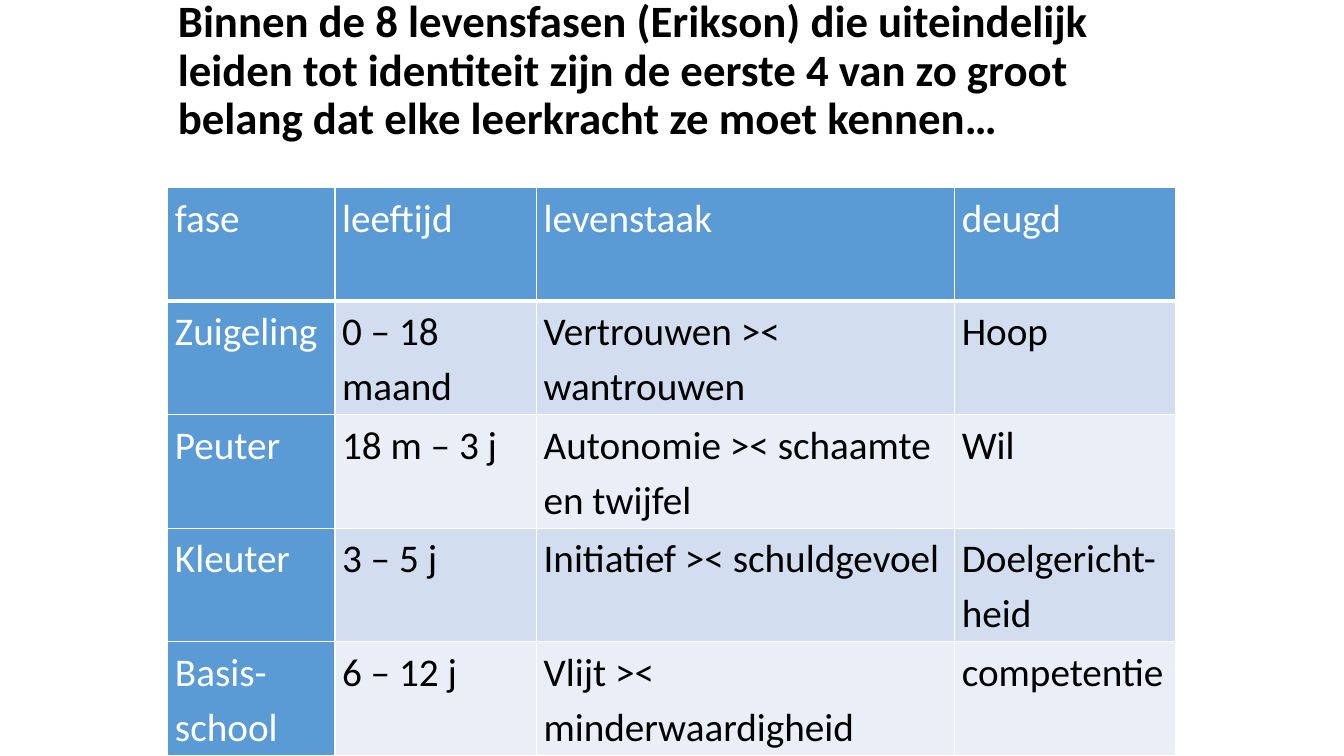
"""Build a slide with a table of Erikson's first four life stages."""
import lxml.etree
import pptx
import pptx.dml.color
import pptx.enum.text
import pptx.oxml.ns
import pptx.util

Cm = pptx.util.Cm
Pt = pptx.util.Pt
FONT = "Calibri"
COLORS = {
    "black": "000000",
    "white": "FFFFFF",
    "head": "5B9BD5",
    "dark": "D2DEEF",
    "light": "EAEFF7",
}
TITLE = (
    "Binnen de 8 levensfasen (Erikson) die uiteindelijk leiden tot identiteit "
    "zijn de eerste 4 van zo groot belang dat elke leerkracht ze moet kennen…"
)
STAGES = [
    ["fase", "leeftijd", "levenstaak", "deugd"],
    ["Zuigeling", "0 – 18 maand", "Vertrouwen >< wantrouwen", "Hoop"],
    ["Peuter", "18 m – 3 j", "Autonomie >< schaamte en twijfel", "Wil"],
    ["Kleuter", "3 – 5 j", "Initiatief >< schuldgevoel", "Doelgericht-heid"],
    ["Basis-school", "6 – 12 j", "Vlijt >< minderwaardigheid", "competentie"],
]
WIDTHS = [4.21, 5.08, 10.54, 5.57]
HEIGHT = 2.86


def rgb(name):
    return pptx.dml.color.RGBColor.from_string(COLORS[name])


def write(frame, text, size, color, spacing, bold=False):
    para = frame.paragraphs[0]
    para.alignment = pptx.enum.text.PP_ALIGN.LEFT
    para.line_spacing = spacing
    run = para.add_run()
    run.text = text
    run.font.name = FONT
    run.font.size = Pt(size)
    run.font.bold = bold
    run.font.color.rgb = rgb(color)


def add_title(slide):
    title = slide.shapes.title
    title.left, title.top = Cm(4.23), Cm(0.91)
    title.width, title.height = Cm(25.4), Cm(3.02)
    frame = title.text_frame
    frame.word_wrap = True
    frame.auto_size = pptx.enum.text.MSO_AUTO_SIZE.NONE
    frame.vertical_anchor = pptx.enum.text.MSO_ANCHOR.MIDDLE
    frame.margin_bottom = Cm(1.35)
    write(frame, TITLE, 32, "black", 0.9, bold=True)


def add_edges(cell, widths):
    props = cell._tc.get_or_add_tcPr()
    qn = pptx.oxml.ns.qn
    for side, width in widths.items():
        line = lxml.etree.SubElement(props, qn(f"a:ln{side}"), w=str(Pt(width)))
        fill = lxml.etree.SubElement(line, qn("a:solidFill"))
        lxml.etree.SubElement(fill, qn("a:srgbClr"), val=COLORS["white"])


def fill_cell(cell, text, row, col):
    head = row == 0 or col == 0
    band = "dark" if row % 2 else "light"
    add_edges(cell, {"L": 1, "R": 1, "T": 1, "B": 1 if row else 3})
    cell.fill.solid()
    cell.fill.fore_color.rgb = rgb("head" if head else band)
    cell.margin_left = cell.margin_right = Cm(0.18)
    cell.margin_top = cell.margin_bottom = 0
    write(cell.text_frame, text, 28, "white" if head else "black", 1.15)


def add_stages(slide):
    rows, cols = len(STAGES), len(WIDTHS)
    frame = slide.shapes.add_table(
        rows, cols, Cm(4.23), Cm(4.73), Cm(sum(WIDTHS)), Cm(HEIGHT * rows)
    )
    table = frame.table
    for col, width in enumerate(WIDTHS):
        table.columns[col].width = Cm(width)
    for row, texts in enumerate(STAGES):
        table.rows[row].height = Cm(HEIGHT)
        for col, text in enumerate(texts):
            fill_cell(table.cell(row, col), text, row, col)


def main():
    deck = pptx.Presentation()
    deck.slide_width, deck.slide_height = Cm(33.87), Cm(19.05)
    slide = deck.slides.add_slide(deck.slide_layouts[5])
    add_title(slide)
    add_stages(slide)
    deck.save("out.pptx")


if __name__ == "__main__":
    main()
